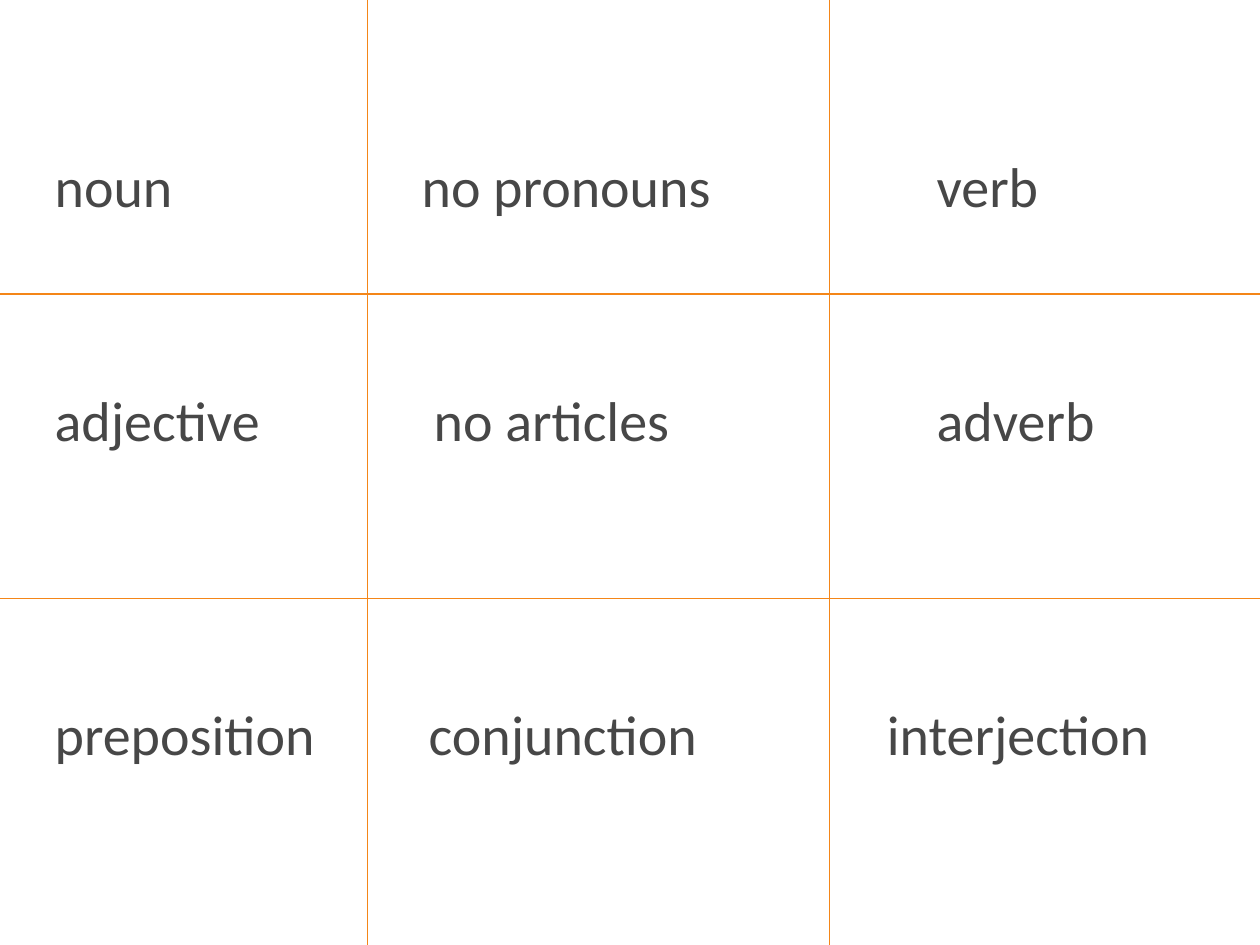
from dataclasses import dataclass

from lxml import etree
from pptx import Presentation
from pptx.dml.color import RGBColor
from pptx.enum import shapes, text
from pptx.oxml import ns
from pptx.util import Pt


@dataclass(frozen=True)
class Theme:
    font: str = "Calibri"
    word_size: float = 32
    word_color: str = "474747"
    rule_color: str = "F48618"
    rule_width: float = 0.75


THEME = Theme()

ROW_GAPS = [0, 95.6, 140.6]
NOUN_COLUMN = [("noun", 0), ("adjective", 0), ("preposition", 0)]
MIDDLE_COLUMN = [("no pronouns", 0), ("no articles", 6.9), ("conjunction", 4)]
VERB_COLUMN = [("verb", 28.5), ("adverb", 28.5), ("interjection", 0)]


def set_indent(paragraph, indent):
    props = paragraph._p.get_or_add_pPr()
    props.set("marL", str(Pt(indent)))
    props.set("indent", "0")
    etree.SubElement(props, ns.qn("a:buNone"))


def place_words(column, words, left, top, width, height):
    column.left, column.top = Pt(left), Pt(top)
    column.width, column.height = Pt(width), Pt(height)
    frame = column.text_frame
    frame.auto_size = text.MSO_AUTO_SIZE.NONE
    frame.word_wrap = True
    frame.vertical_anchor = text.MSO_ANCHOR.TOP
    frame.margin_left, frame.margin_top = Pt(7.2), Pt(3.7)
    for index, ((word, indent), gap) in enumerate(zip(words, ROW_GAPS)):
        row = frame.add_paragraph() if index else frame.paragraphs[0]
        row.text = word
        row.alignment = text.PP_ALIGN.LEFT
        row.space_before = Pt(gap)
        set_indent(row, indent)
        row.font.name = THEME.font
        row.font.size = Pt(THEME.word_size)
        row.font.color.rgb = RGBColor.from_string(THEME.word_color)


def add_rule(slide, start, end):
    rule = slide.shapes.add_connector(
        shapes.MSO_CONNECTOR.STRAIGHT, *map(Pt, start + end)
    )
    rule.line.color.rgb = RGBColor.from_string(THEME.rule_color)
    rule.line.width = Pt(THEME.rule_width)
    etree.SubElement(rule._element.spPr, ns.qn("a:effectLst"))


def draw_grid(slide, left, top, width, height):
    for x in (210, 474):
        add_rule(slide, (left + x, top), (left + x, top + height))
    for y in (168, 342):
        add_rule(slide, (left, top + y), (left + width, top + y))


def fill_columns(slide, left, top, width, height):
    place_words(slide.placeholders[1], NOUN_COLUMN, left, top, 186, height)
    for words, offset, end in (
        (MIDDLE_COLUMN, 209.9, 450),
        (VERB_COLUMN, 475.7, width),
    ):
        column = slide.shapes.add_textbox(0, 0, 0, 0)
        place_words(column, words, left + offset, top, end - offset, height)


def main():
    deck = Presentation()
    deck.slide_width, deck.slide_height = Pt(720), Pt(540)
    slide = deck.slides.add_slide(deck.slide_layouts[1])
    title = slide.shapes.title._element
    title.getparent().remove(title)
    fill_columns(slide, 24, 82.8, 684, 398)
    draw_grid(slide, 0, 0, 720, 540)
    deck.save("out.pptx")


if __name__ == "__main__":
    main()
